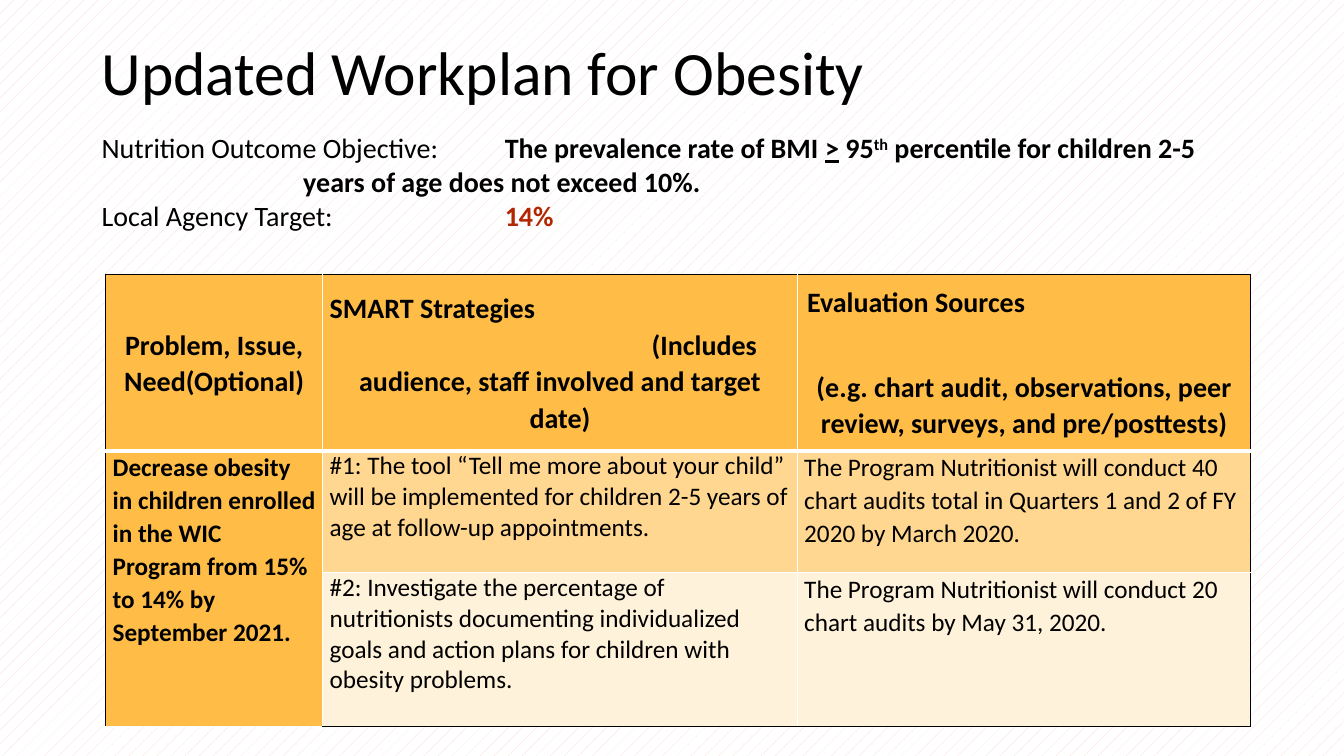
from dataclasses import dataclass

from lxml import etree
from pptx import Presentation
from pptx.dml.color import RGBColor
from pptx.enum.dml import MSO_PATTERN
from pptx.enum.text import MSO_ANCHOR, PP_ALIGN
from pptx.oxml.ns import qn
from pptx.util import Pt

LEFT, CENTER = PP_ALIGN.LEFT, PP_ALIGN.CENTER
MIDDLE, TOP = MSO_ANCHOR.MIDDLE, MSO_ANCHOR.TOP
DOTS = MSO_PATTERN.PERCENT_5


@dataclass(frozen=True)
class Theme:
    """Colours, font and type sizes of the deck."""
    font: str = "Calibri"
    ink: str = "000000"
    paper: str = "FFFFFF"
    dots: str = "F5D8CF"
    accent: str = "B22600"
    header: str = "FFBD47"
    band: str = "FFD791"
    light: str = "FFF2DA"
    title: int = 44
    lead: int = 20
    body: int = 18


@dataclass(frozen=True)
class Line:
    """One paragraph of a table cell, with its layout."""
    text: str
    align: int = LEFT
    indent: float = 0
    after: float = 8
    spacing: float = 1.07


THEME = Theme()
COLUMNS = (155, 339, 324)
ROWS = (126, 87, 110)
TAB_STOPS = (144, 288)
HEADERS = (
    [Line("Problem, Issue, Need(Optional)", CENTER)],
    [Line("SMART Strategies", after=0),
     Line("(Includes", indent=230, after=0),
     Line("audience, staff involved and target date)", CENTER)],
    [Line("Evaluation Sources", indent=2, after=34),
     Line("(e.g. chart audit, observations, peer review, surveys, "
          "and pre/posttests)", CENTER)],
)
PROBLEM = [Line("Decrease obesity in children enrolled in the WIC Program "
                "from 15% to 14% by September 2021.")]
STRATEGIES = (
    ([Line("#1: The tool “Tell me more about your child” will be implemented "
           "for children 2-5 years of age at follow-up appointments.",
           after=0, spacing=1.0)],
     [Line("The Program Nutritionist will conduct 40 chart audits total in "
           "Quarters 1 and 2 of FY 2020 by March 2020.")]),
    ([Line("#2: Investigate the percentage of nutritionists documenting "
           "individualized goals and action plans for children with obesity "
           "problems.", after=0, spacing=1.0)],
     [Line("The Program Nutritionist will conduct 20 chart audits by "
           "May 31, 2020.")]),
)


def style_font(font, size, color=THEME.ink, bold=False):
    """Apply the theme font with a size, colour and weight."""
    font.name, font.size, font.bold = THEME.font, Pt(size), bold
    font.color.rgb = RGBColor.from_string(color)


def paint_background(page):
    """Fill the page with a faint dotted pattern."""
    fill = page.background.fill
    fill.patterned()
    fill.pattern = DOTS
    fill.fore_color.rgb = RGBColor.from_string(THEME.dots)
    fill.back_color.rgb = RGBColor.from_string(THEME.paper)


def place_title(page, left, top, width, height):
    """Put the slide title in its placeholder."""
    title = page.shapes.title
    title.left, title.top = Pt(left), Pt(top)
    title.width, title.height = Pt(width), Pt(height)
    frame = title.text_frame
    frame.text = "Updated Workplan for Obesity"
    frame.vertical_anchor = MIDDLE
    para = frame.paragraphs[0]
    para.alignment, para.line_spacing = LEFT, 0.9
    style_font(para.font, THEME.title)


def add_span(para, text, color=THEME.ink, bold=True):
    """Append a formatted run to a paragraph and return it."""
    span = para.add_run()
    span.text = text
    style_font(span.font, THEME.lead, color, bold)
    return span


def set_tabs(para):
    """Give a paragraph the tab stops of the objective block."""
    stops = etree.SubElement(para._p.get_or_add_pPr(), qn("a:tabLst"))
    for position in TAB_STOPS:
        etree.SubElement(stops, qn("a:tab"), pos=str(Pt(position)), algn="l")


def place_objective(page, left, top, width, height):
    """Write the outcome objective and the local target."""
    box = page.shapes.add_textbox(Pt(left), Pt(top), Pt(width), Pt(height))
    frame = box.text_frame
    frame.word_wrap = True
    frame.vertical_anchor = MIDDLE
    objective, target = frame.paragraphs[0], frame.add_paragraph()
    set_tabs(objective)
    set_tabs(target)
    add_span(objective, "Nutrition Outcome Objective:\t", bold=False)
    add_span(objective, "The prevalence rate of BMI ")
    add_span(objective, ">").font.underline = True
    add_span(objective, " 95")
    ordinal = add_span(objective, "th")
    ordinal._r.get_or_add_rPr().set("baseline", "30000")
    add_span(objective, " percentile for children 2-5")
    objective.add_line_break()
    add_span(objective, "\tyears of age does not exceed 10%.")
    add_span(target, "Local Agency Target:\t", bold=False)
    add_span(target, "14%", THEME.accent)


def draw_borders(cell, row, column):
    """Rule a cell: black on the table's edge, white inside."""
    last_row, last_column = len(ROWS) - 1, len(COLUMNS) - 1
    sides = (
        ("a:lnL", column == 0, 1),
        ("a:lnR", column == last_column, 1),
        ("a:lnT", row == 0, 3 if row == 1 else 1),
        ("a:lnB", row == last_row, 3 if row == 0 else 1),
    )
    properties = cell._tc.get_or_add_tcPr()
    for tag, outer, weight in sides:
        line = etree.SubElement(properties, qn(tag), w=str(Pt(weight)))
        fill = etree.SubElement(line, qn("a:solidFill"))
        color = THEME.ink if outer else THEME.paper
        etree.SubElement(fill, qn("a:srgbClr"), val=color)


def fill_cell(cell, lines, size, bold, anchor):
    """Write the paragraphs of one table cell."""
    cell.vertical_anchor = anchor
    frame = cell.text_frame
    for index, line in enumerate(lines):
        para = frame.add_paragraph() if index else frame.paragraphs[0]
        para.text = line.text
        para.alignment = line.align
        para.line_spacing, para.space_after = line.spacing, Pt(line.after)
        para._p.get_or_add_pPr().set("marL", str(Pt(line.indent)))
        style_font(para.font, size, bold=bold)


def place_workplan(page, left, top):
    """Build the workplan table at the given corner."""
    table = page.shapes.add_table(
        len(ROWS), len(COLUMNS), Pt(left), Pt(top),
        Pt(sum(COLUMNS)), Pt(sum(ROWS))).table
    table.first_row = table.horz_banding = False
    for column, width in zip(table.columns, COLUMNS):
        column.width = Pt(width)
    for row, height in zip(table.rows, ROWS):
        row.height = Pt(height)
    for row, band in enumerate((THEME.header, THEME.band, THEME.light)):
        for column in range(len(COLUMNS)):
            cell = table.cell(row, column)
            cell.margin_left = cell.margin_right = Pt(5)
            cell.margin_top = cell.margin_bottom = 0
            draw_borders(cell, row, column)
            cell.fill.solid()
            color = band if column else THEME.header
            cell.fill.fore_color.rgb = RGBColor.from_string(color)
    table.cell(1, 0).merge(table.cell(2, 0))
    for column, lines in enumerate(HEADERS):
        fill_cell(table.cell(0, column), lines, THEME.lead, True, MIDDLE)
    fill_cell(table.cell(1, 0), PROBLEM, THEME.body, True, TOP)
    for row, entries in enumerate(STRATEGIES, start=1):
        for column, lines in enumerate(entries, start=1):
            fill_cell(table.cell(row, column), lines, THEME.body, False, TOP)


def main():
    """Build the one-slide deck and save it."""
    deck = Presentation()
    deck.slide_width, deck.slide_height = Pt(960), Pt(540)
    page = deck.slides.add_slide(deck.slide_layouts[5])
    paint_background(page)
    place_title(page, 65.5, 8.5, 828, 91)
    place_objective(page, 65.5, 89.5, 833, 80)
    place_workplan(page, 75.5, 196)
    deck.save("out.pptx")


if __name__ == "__main__":
    main()
